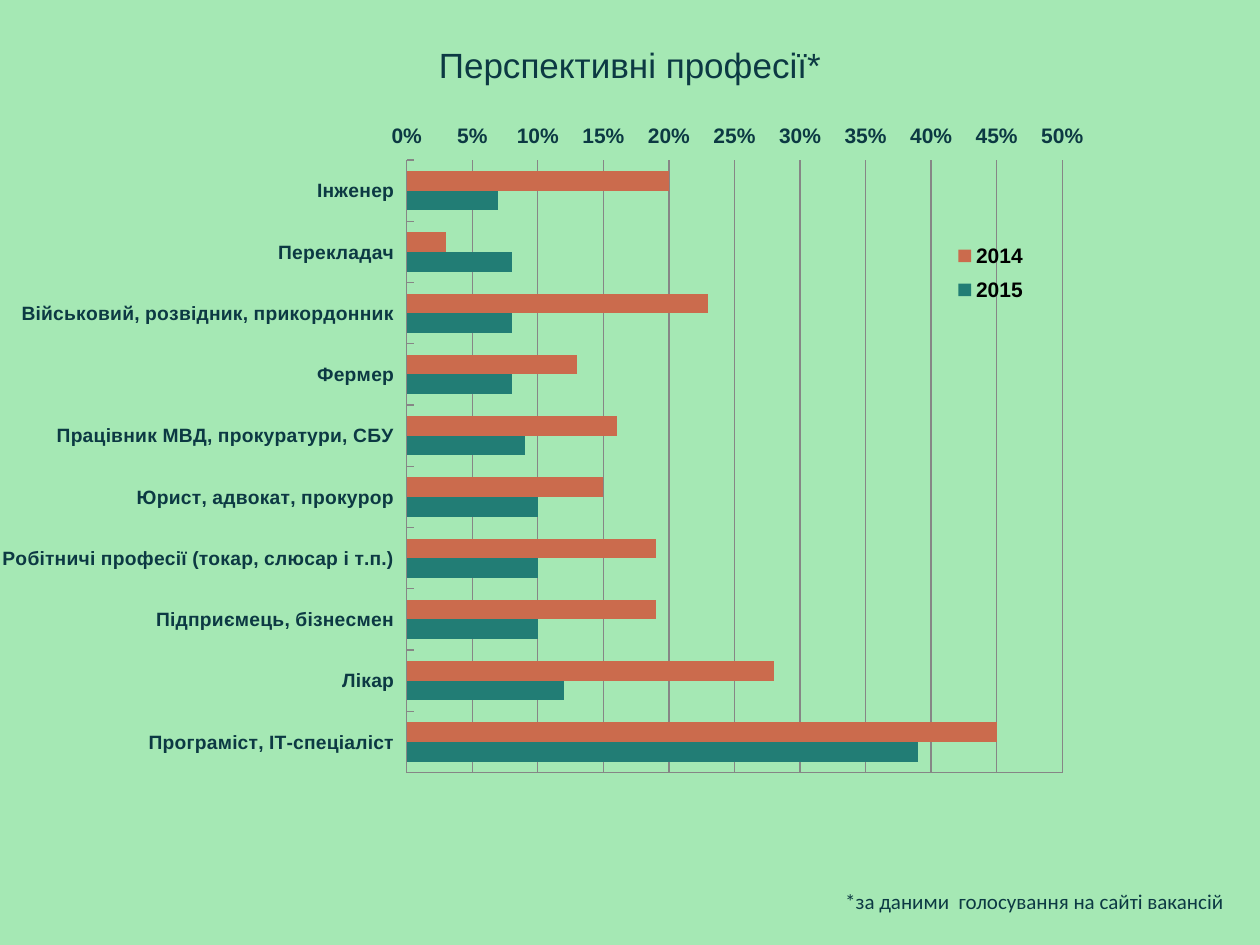
from lxml import etree
from pptx import Presentation
from pptx import util as u
from pptx.chart.data import CategoryChartData
from pptx.dml.color import RGBColor
from pptx.enum import chart as ch, text
from pptx.oxml import ns

COLORS = {"bg": "A5E8B4", "ink": "0C3943", "legend": "000000", "grid": "868686",
          "2015": "227D75", "2014": "CB6B4D"}
ROWS = [
    ("Програміст, ІТ-спеціаліст", 0.39, 0.45),
    ("Лікар", 0.12, 0.28),
    ("Підприємець, бізнесмен", 0.1, 0.19),
    ("Робітничі професії (токар, слюсар і т.п.)", 0.1, 0.19),
    ("Юрист, адвокат, прокурор", 0.1, 0.15),
    ("Працівник МВД, прокуратури, СБУ", 0.09, 0.16),
    ("Фермер", 0.08, 0.13),
    ("Військовий, розвідник, прикордонник", 0.08, 0.23),
    ("Перекладач", 0.08, 0.03),
    ("Інженер", 0.07, 0.2),
]


def set_font(font, color, **fmt):
    for name, value in fmt.items():
        setattr(font, name, value)
    font.color.rgb = RGBColor.from_string(COLORS[color])


def set_layout(parent, after, values, inner=False):
    for old in parent.findall(ns.qn("c:layout")):
        parent.remove(old)
    layout = etree.Element(ns.qn("c:layout"))
    manual = etree.SubElement(layout, ns.qn("c:manualLayout"))
    items = [("layoutTarget", "inner")] if inner else []
    items += [("xMode", "edge"), ("yMode", "edge")] + list(zip("xywh", values))
    for tag, value in items:
        etree.SubElement(manual, ns.qn("c:" + tag)).set("val", str(value))
    if after is None:
        parent.insert(0, layout)
    else:
        after.addnext(layout)


prs = Presentation()
prs.slide_width, prs.slide_height = u.Inches(10), u.Inches(7.5)
s = prs.slides.add_slide(prs.slide_layouts[5])
s.background.fill.solid()
s.background.fill.fore_color.rgb = RGBColor.from_string(COLORS["bg"])

data = CategoryChartData(number_format="0%")
data.categories = [row[0] for row in ROWS]
for i, year in enumerate(("2015", "2014"), 1):
    data.add_series(year, [row[i] for row in ROWS])
chart = s.shapes.add_chart(ch.XL_CHART_TYPE.BAR_CLUSTERED, u.Inches(-0.28), u.Inches(0.76),
                           u.Inches(10.93), u.Inches(5.74), data).chart
chart.has_title = False
set_font(chart.font, "legend", name="Arial", size=u.Pt(12), bold=True)

plot = chart.plots[0]
for name, value in {"gap_width": 112, "overlap": 0, "vary_by_categories": False}.items():
    setattr(plot, name, value)
for series in plot.series:
    series.format.fill.solid()
    series.format.fill.fore_color.rgb = RGBColor.from_string(COLORS[series.name])

cat, val = chart.category_axis, chart.value_axis
for name, value in {"minimum_scale": 0, "maximum_scale": 0.5, "major_unit": 0.05,
                    "has_major_gridlines": True}.items():
    setattr(val, name, value)
val.tick_labels.number_format = "0%"
val.tick_labels.number_format_is_linked = False
for axis, size, position in ((cat, 11, ch.XL_TICK_LABEL_POSITION.LOW),
                             (val, 12, ch.XL_TICK_LABEL_POSITION.HIGH)):
    axis.major_tick_mark = ch.XL_TICK_MARK.INSIDE
    axis.minor_tick_mark = ch.XL_TICK_MARK.NONE
    axis.tick_label_position = position
    set_font(axis.tick_labels.font, "ink", name="Arial", size=u.Pt(size), bold=True)
for line in (cat.format.line, val.format.line, val.major_gridlines.format.line):
    line.width = u.Pt(0.75)
    line.color.rgb = RGBColor.from_string(COLORS["grid"])

chart.has_legend = True
legend = chart.legend
legend.position = ch.XL_LEGEND_POSITION.RIGHT
legend.include_in_layout = False
set_font(legend.font, "legend", name="Arial", size=u.Pt(12), bold=True)
legend_xml = chart.element.find(".//" + ns.qn("c:legend"))
set_layout(legend_xml, legend_xml.find(ns.qn("c:legendPos")), (0.71, 0.19, 0.07, 0.11))
set_layout(chart.element.find(".//" + ns.qn("c:plotArea")), None,
           (0.321, 0.089, 0.476, 0.847), inner=True)

title = s.shapes.title
note = s.shapes.add_textbox(0, 0, 0, 0)
for sp, box, words, font, size, align, anchor in (
    (title, (1.97, 0.29, 6.06, 0.44), "Перспективні професії*", "Arial", 20,
     text.PP_ALIGN.CENTER, text.MSO_ANCHOR.MIDDLE),
    (note, (6.61, 7, 3.39, 0.5), "*за даними  голосування на сайті вакансій", "Calibri", 12,
     text.PP_ALIGN.LEFT, text.MSO_ANCHOR.TOP),
):
    sp.left, sp.top, sp.width, sp.height = map(u.Inches, box)
    tf = sp.text_frame
    tf.word_wrap = True
    tf.vertical_anchor = anchor
    p = tf.paragraphs[0]
    p.alignment = align
    r = p.add_run()
    r.text = words
    set_font(r.font, "ink", name=font, size=u.Pt(size), bold=False)

prs.save("out.pptx")
